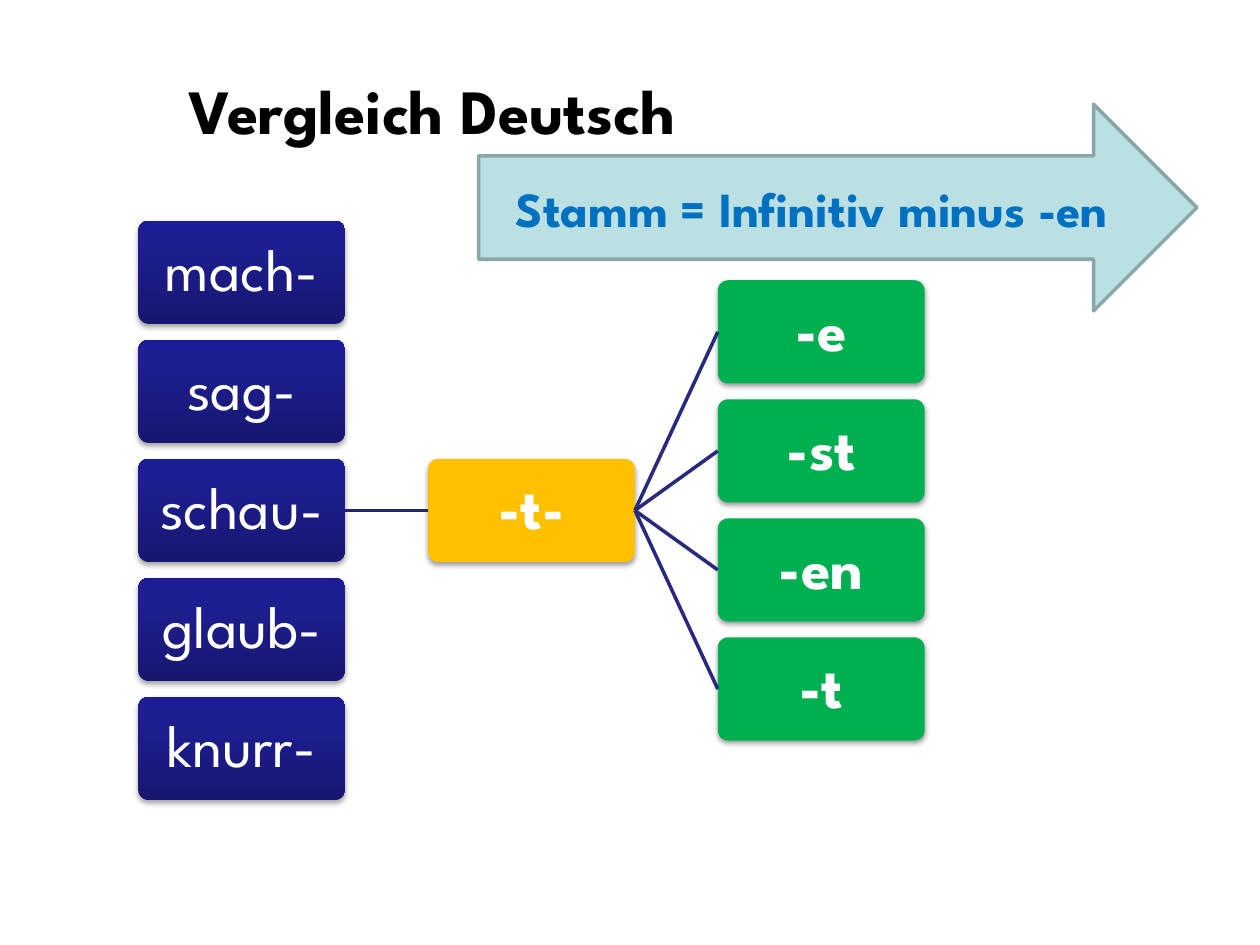
from copy import deepcopy
from dataclasses import dataclass

from pptx import Presentation
from pptx import util as u
from pptx.dml.color import RGBColor
from pptx.enum import shapes, text
from pptx.oxml import parse_xml
from pptx.oxml.ns import nsdecls, qn


@dataclass(frozen=True)
class Theme:
    font: str = "League Spartan"
    title_size: int = 36
    box_size: int = 34
    arrow_size: int = 28
    black: str = "000000"
    white: str = "FFFFFF"
    stem: tuple = ((0, "171771"), (0.8, "1E1E93"), (1, "1C1C96"))
    tense: str = "FFC000"
    ending: str = "00B050"
    stem_line: str = "24246F"
    ending_line: str = "29297D"
    arrow_fill: str = "BBE0E3"
    arrow_line: str = "8AA6A8"
    arrow_text: str = "0070C0"
    line_width: int = 2


THEME = Theme()
BOX_W, BOX_H = 4.17, 2.08
COLUMN_LEFT, COLUMN_PITCH = 2.79, 5.84
MIDDLE_TOP, ROW_PITCH = 9.25, 2.4


def rgb(value):
    return RGBColor.from_string(value)


def write(sp, content, size, color, bold, align):
    tf = sp.text_frame
    tf.word_wrap = True
    tf.vertical_anchor = text.MSO_ANCHOR.MIDDLE
    p = tf.paragraphs[0]
    p.text = content
    p.alignment = align
    p.font.name = THEME.font
    p.font.size = u.Pt(size)
    p.font.bold = bold
    p.font.color.rgb = rgb(color)


def fill_gradient(sp, colors):
    """Fill with three stops running from the bottom edge to the top."""
    sp.fill.gradient()
    sp.fill.gradient_angle = 90
    gs_list = sp._element.spPr.find(".//" + qn("a:gsLst"))
    gs_list.append(deepcopy(gs_list[-1]))
    for stop, (position, color) in zip(sp.fill.gradient_stops, colors):
        stop.position = position
        stop.color.rgb = rgb(color)


def add_shadow(sp, distance, opacity):
    sp._element.spPr.append(parse_xml(
        f'<a:effectLst {nsdecls("a")}>'
        f'<a:outerShdw blurRad="40000" dist="{distance}" dir="5400000" rotWithShape="0">'
        f'<a:srgbClr val="{THEME.black}"><a:alpha val="{opacity * 1000}"/></a:srgbClr>'
        '</a:outerShdw></a:effectLst>'))


def add_box(s, left, top, label, fill):
    sp = s.shapes.add_shape(shapes.MSO_SHAPE.ROUNDED_RECTANGLE,
                            u.Cm(left), u.Cm(top), u.Cm(BOX_W), u.Cm(BOX_H))
    sp.adjustments[0] = 0.1
    is_gradient = isinstance(fill, tuple)
    if is_gradient:
        fill_gradient(sp, fill)
    else:
        sp.fill.solid()
        sp.fill.fore_color.rgb = rgb(fill)
    sp.line.fill.background()
    add_shadow(sp, *((23000, 35) if is_gradient else (20000, 38)))
    tf = sp.text_frame
    tf.margin_left = tf.margin_right = tf.margin_top = tf.margin_bottom = u.Cm(0.05)
    write(sp, label, THEME.box_size, THEME.white, not is_gradient,
          text.PP_ALIGN.CENTER)
    tf.paragraphs[0].line_spacing = 0.9
    return sp


def add_column(s, index, labels, fill):
    """Stack boxes evenly around the middle row of the diagram."""
    left = COLUMN_LEFT + index * COLUMN_PITCH
    top = MIDDLE_TOP - (len(labels) - 1) / 2 * ROW_PITCH
    return [add_box(s, left, top + row * ROW_PITCH, label, fill)
            for row, label in enumerate(labels)]


def join(s, start, end, color):
    """Connect the right side of one box to the left side of another."""
    line = s.shapes.add_connector(shapes.MSO_CONNECTOR.STRAIGHT, 0, 0, 0, 0)
    line.begin_connect(start, 3)
    line.end_connect(end, 1)
    line.line.color.rgb = rgb(color)
    line.line.width = u.Pt(THEME.line_width)
    line._element.spPr.append(parse_xml(f'<a:effectLst {nsdecls("a")}/>'))


def add_title(s, content):
    sp = s.shapes.add_textbox(u.Cm(3.56), u.Cm(1.19), u.Cm(20.45), u.Cm(2.03))
    write(sp, content, THEME.title_size, THEME.black, True, text.PP_ALIGN.LEFT)


def add_arrow(s, content):
    sp = s.shapes.add_shape(shapes.MSO_SHAPE.RIGHT_ARROW,
                            u.Cm(9.65), u.Cm(2.1), u.Cm(14.48), u.Cm(4.17))
    sp.shadow.inherit = False
    sp.fill.solid()
    sp.fill.fore_color.rgb = rgb(THEME.arrow_fill)
    sp.line.color.rgb = rgb(THEME.arrow_line)
    sp.line.width = u.Pt(THEME.line_width)
    write(sp, content, THEME.arrow_size, THEME.arrow_text, True,
          text.PP_ALIGN.CENTER)


def main():
    prs = Presentation()
    prs.slide_width, prs.slide_height = u.Cm(25.4), u.Cm(19.05)
    s = prs.slides.add_slide(prs.slide_layouts[6])

    add_title(s, "Vergleich Deutsch")
    stems = add_column(s, 0, ["mach-", "sag-", "schau-", "glaub-", "knurr-"],
                       THEME.stem)
    [tense] = add_column(s, 1, ["-t-"], THEME.tense)
    endings = add_column(s, 2, ["-e", "-st", "-en", "-t"], THEME.ending)
    join(s, stems[2], tense, THEME.stem_line)
    for ending in endings:
        join(s, tense, ending, THEME.ending_line)
    add_arrow(s, "Stamm = Infinitiv minus -en")

    prs.save("out.pptx")


if __name__ == "__main__":
    main()
